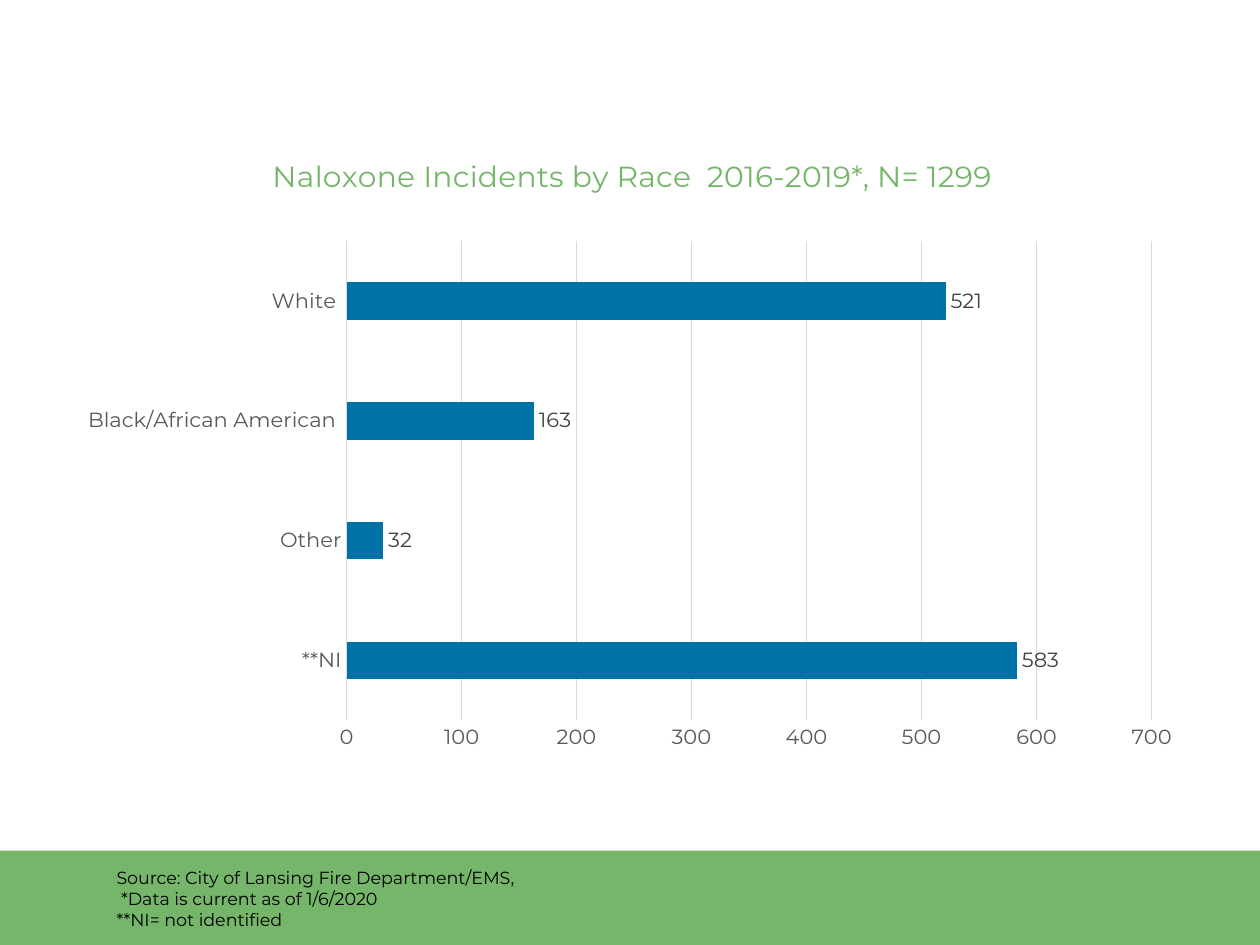
from dataclasses import dataclass

from lxml import etree
from pptx import Presentation
from pptx.chart.data import CategoryChartData
from pptx.dml.color import RGBColor
from pptx.enum.chart import (XL_AXIS_CROSSES, XL_CHART_TYPE, XL_LABEL_POSITION,
                             XL_TICK_MARK)
from pptx.enum.shapes import MSO_SHAPE
from pptx.oxml.ns import qn
from pptx.util import Cm, Pt


@dataclass(frozen=True)
class Theme:
    font: str = "Montserrat"
    green: str = "75B66A"
    blue: str = "0072A6"
    grid: str = "D9D9D9"
    axis_text: str = "595959"
    label_text: str = "404040"
    black: str = "000000"
    title_size: int = 17
    chart_size: int = 12
    note_size: int = 10


THEME = Theme()
TITLE = "Naloxone Incidents by Race  2016-2019*, N= 1299"
INCIDENTS = {"**NI": 583, "Other": 32, "Black/African American ": 163, "White ": 521}
NOTES = ["Source: City of Lansing Fire Department/EMS,",
         " *Data is current as of 1/6/2020",
         "**NI= not identified"]


def style_font(font, size, color):
    font.name = THEME.font
    font.size = Pt(size)
    font.bold = False
    font.color.rgb = RGBColor.from_string(color)


def style_line(line):
    line.color.rgb = RGBColor.from_string(THEME.grid)
    line.width = Pt(0.75)


def set_layout(parent, before, **values):
    """Fix a chart part's place, in fractions of the chart, ahead of one of its children."""
    for old in parent.findall(qn("c:layout")):
        parent.remove(old)
    layout = etree.Element(qn("c:layout"))
    manual = etree.SubElement(layout, qn("c:manualLayout"))
    for tag, val in values.items():
        etree.SubElement(manual, qn(f"c:{tag}")).set("val", str(val))
    parent.find(qn(before)).addprevious(layout)


def add_incident_chart(s, left, top, width, height):
    data = CategoryChartData()
    data.categories = list(INCIDENTS)
    data.add_series("Series 1", list(INCIDENTS.values()))
    chart = s.shapes.add_chart(XL_CHART_TYPE.BAR_CLUSTERED, left, top, width, height,
                               data).chart
    chart.has_legend = False
    style_font(chart.font, THEME.note_size, THEME.black)

    r = chart.chart_title.text_frame.paragraphs[0].add_run()
    r.text = TITLE
    style_font(r.font, THEME.title_size, THEME.green)
    chart.chart_title.include_in_layout = False
    title = chart.chart_title._element
    set_layout(title, "c:overlay", xMode="edge", yMode="edge", x=0.18, y=0.04)

    plot = chart.plots[0]
    plot.gap_width = 219
    plot.vary_by_categories = False
    series = plot.series[0]
    series.format.fill.solid()
    series.format.fill.fore_color.rgb = RGBColor.from_string(THEME.blue)
    labels = series.data_labels
    labels.show_value = True
    labels.position = XL_LABEL_POSITION.OUTSIDE_END
    style_font(labels.font, THEME.chart_size, THEME.label_text)

    cats, values = chart.category_axis, chart.value_axis
    for axis in (cats, values):
        axis.major_tick_mark = axis.minor_tick_mark = XL_TICK_MARK.NONE
        style_font(axis.tick_labels.font, THEME.chart_size, THEME.axis_text)
    cats.crosses = XL_AXIS_CROSSES.MAXIMUM  # puts the value scale on top
    style_line(cats.format.line)
    values.minimum_scale, values.maximum_scale, values.major_unit = 0, 700, 100
    values.format.line.fill.background()
    style_line(values.major_gridlines.format.line)

    plot_area = chart._chartSpace.chart.plotArea
    set_layout(plot_area, "c:barChart", layoutTarget="inner", xMode="edge",
               yMode="edge", x=0.25, y=0.19, w=0.71, h=0.79)


def add_footer(s, left, top, width, height):
    """Green band with the source notes."""
    band = s.shapes.add_shape(MSO_SHAPE.RECTANGLE, left, top, width, height)
    band.shadow.inherit = False
    band.fill.solid()
    band.fill.fore_color.rgb = RGBColor.from_string(THEME.green)
    band.line.fill.background()

    tf = s.shapes.add_textbox(left + Cm(2.1), top + Cm(0.2), Cm(20.5), Cm(1.55)).text_frame
    tf.word_wrap = True
    for i, note in enumerate(NOTES):
        p = tf.add_paragraph() if i else tf.paragraphs[0]
        r = p.add_run()
        r.text = note
        style_font(r.font, THEME.note_size, THEME.black)


def main():
    prs = Presentation()
    prs.slide_width, prs.slide_height = Cm(25.4), Cm(19.05)
    s = prs.slides.add_slide(prs.slide_layouts[6])
    footer_top = Cm(17.15)
    add_footer(s, 0, footer_top, prs.slide_width, prs.slide_height - footer_top)
    add_incident_chart(s, Cm(1.27), Cm(2.54), Cm(22.86), Cm(12.57))
    prs.save("out.pptx")


if __name__ == "__main__":
    main()
